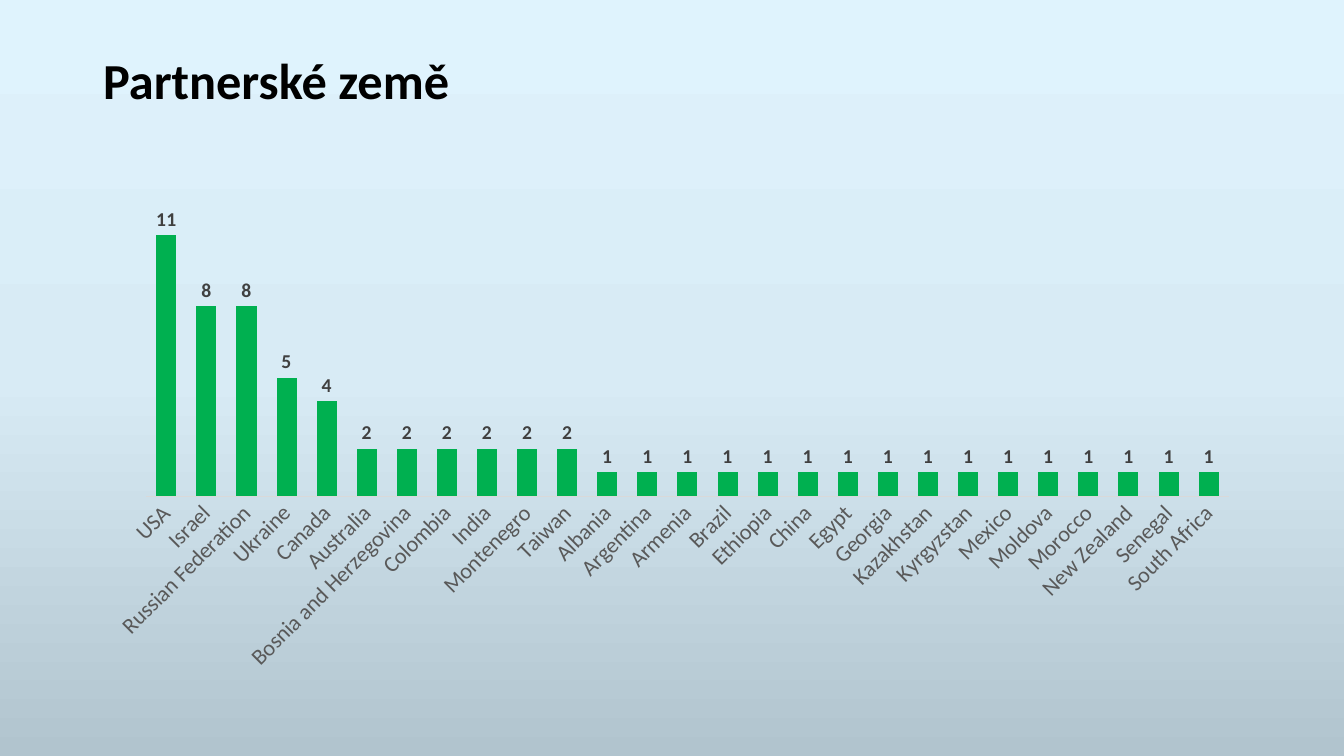
from copy import deepcopy

from lxml.etree import SubElement
from pptx import Presentation
from pptx.chart.data import CategoryChartData
from pptx.dml.color import RGBColor
from pptx.enum.chart import XL_CHART_TYPE, XL_LABEL_POSITION, XL_TICK_MARK
from pptx.enum.text import MSO_ANCHOR, MSO_AUTO_SIZE, PP_ALIGN
from pptx.oxml import parse_xml
from pptx.oxml.ns import nsdecls, qn
from pptx.util import Emu, Pt

FONT = "Calibri"
EMU_PER_PX = 914400 / 100.8

BACKGROUND_STOPS = [(0, "DFF3FD"), (0.5, "D8EBF5"), (1, "B1C4CE")]

COUNTRIES_BY_COUNT = {
    11: ["USA"],
    8: ["Israel", "Russian Federation"],
    5: ["Ukraine"],
    4: ["Canada"],
    2: ["Australia", "Bosnia and Herzegovina", "Colombia", "India",
        "Montenegro", "Taiwan"],
    1: ["Albania", "Argentina", "Armenia", "Brazil", "Ethiopia", "China",
        "Egypt", "Georgia", "Kazakhstan", "Kyrgyzstan", "Mexico", "Moldova",
        "Morocco", "New Zealand", "Senegal", "South Africa"],
}


def px(length):
    return Emu(round(length * EMU_PER_PX))


def rgb(color):
    return RGBColor.from_string(color)


def set_font(font, size, color, bold=False):
    font.name = FONT
    font.size = Pt(size)
    font.bold = bold
    font.color.rgb = rgb(color)


def paint_background(slide):
    fill = slide.background.fill
    fill.gradient()
    fill.gradient_angle = 270
    stop_list = next(slide.element.iter(qn("a:gsLst")))
    stop_list.append(deepcopy(stop_list[-1]))
    for stop, (position, color) in zip(fill.gradient_stops, BACKGROUND_STOPS):
        stop.position = position
        stop.color.rgb = rgb(color)


def set_title(slide, text):
    title = slide.shapes.title
    title.left, title.top, title.width, title.height = map(px, (93, 40, 1106, 87))
    frame = title.text_frame
    frame.text = text
    frame.word_wrap = True
    frame.auto_size = MSO_AUTO_SIZE.NONE
    frame.vertical_anchor = MSO_ANCHOR.MIDDLE
    heading = frame.paragraphs[0]
    heading.alignment = PP_ALIGN.LEFT
    heading.line_spacing = 0.9
    set_font(heading.font, 36, "000000", bold=True)


def place_plot(chart, **fractions):
    """Fix the inner plot area at the given fractions of the chart."""
    layout = parse_xml(f"<c:layout {nsdecls('c')}><c:manualLayout/></c:layout>")
    settings = {"layoutTarget": "inner", "xMode": "edge", "yMode": "edge", **fractions}
    for tag, value in settings.items():
        SubElement(layout[0], qn(f"c:{tag}")).set("val", str(value))
    next(chart.element.iter(qn("c:plotArea"))).insert(0, layout)


def format_axes(chart):
    countries = chart.category_axis
    countries.major_tick_mark = XL_TICK_MARK.NONE
    countries.minor_tick_mark = XL_TICK_MARK.NONE
    countries.has_major_gridlines = False
    countries.format.line.color.rgb = rgb("D9D9D9")
    countries.format.line.width = Pt(0.75)
    set_font(countries.tick_labels.font, 16, "595959")
    label_body = next(countries._element.iter(qn("a:bodyPr")))
    label_body.set("rot", str(-45 * 60000))
    label_body.set("vert", "horz")

    counts = chart.value_axis
    counts.visible = False
    counts.has_major_gridlines = False
    counts.minimum_scale = 0
    counts.maximum_scale = 12


def format_columns(plot):
    plot.gap_width = 100
    plot.vary_by_categories = False
    columns = plot.series[0]
    columns.invert_if_negative = False
    columns.format.fill.solid()
    columns.format.fill.fore_color.rgb = rgb("00B050")
    labels = columns.data_labels
    labels.show_value = True
    labels.position = XL_LABEL_POSITION.OUTSIDE_END
    set_font(labels.font, 14, "404040", bold=True)


def add_country_chart(slide):
    data = CategoryChartData()
    data.categories = [c for group in COUNTRIES_BY_COUNT.values() for c in group]
    data.add_series("Series 1", [count for count, group in COUNTRIES_BY_COUNT.items()
                                 for _ in group])
    chart = slide.shapes.add_chart(XL_CHART_TYPE.COLUMN_CLUSTERED, px(93), px(202),
                                   px(1159), px(480), data).chart
    chart.has_title = False
    chart.has_legend = False
    set_font(chart.font, 10, "000000")
    place_plot(chart, x=0.046, y=0.02, w=0.934, h=0.593)
    format_axes(chart)
    format_columns(chart.plots[0])


def main():
    deck = Presentation()
    deck.slide_width, deck.slide_height = px(1344), px(756)
    slide = deck.slides.add_slide(deck.slide_layouts[5])
    paint_background(slide)
    set_title(slide, "Partnerské země")
    add_country_chart(slide)
    deck.save("out.pptx")


if __name__ == "__main__":
    main()
